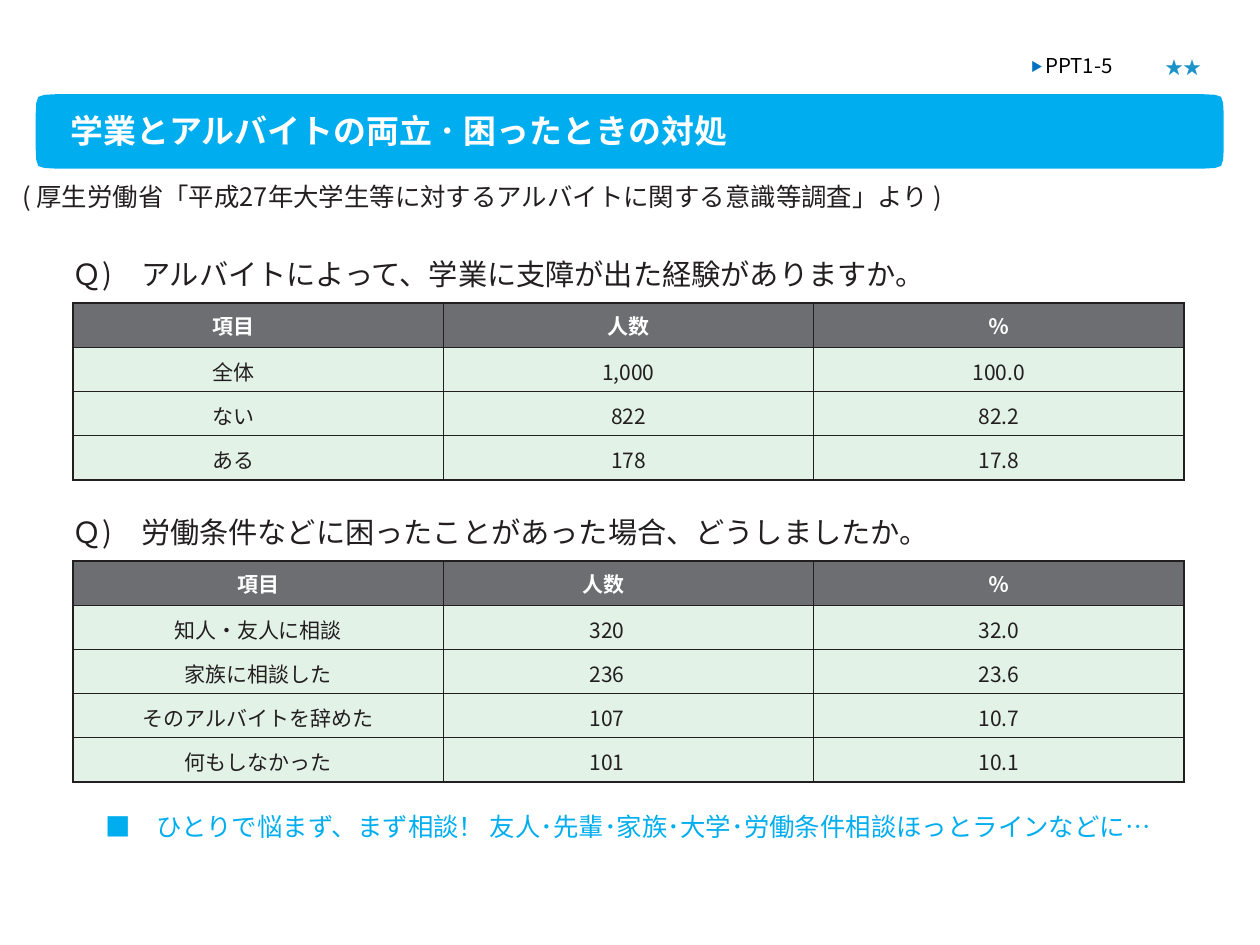
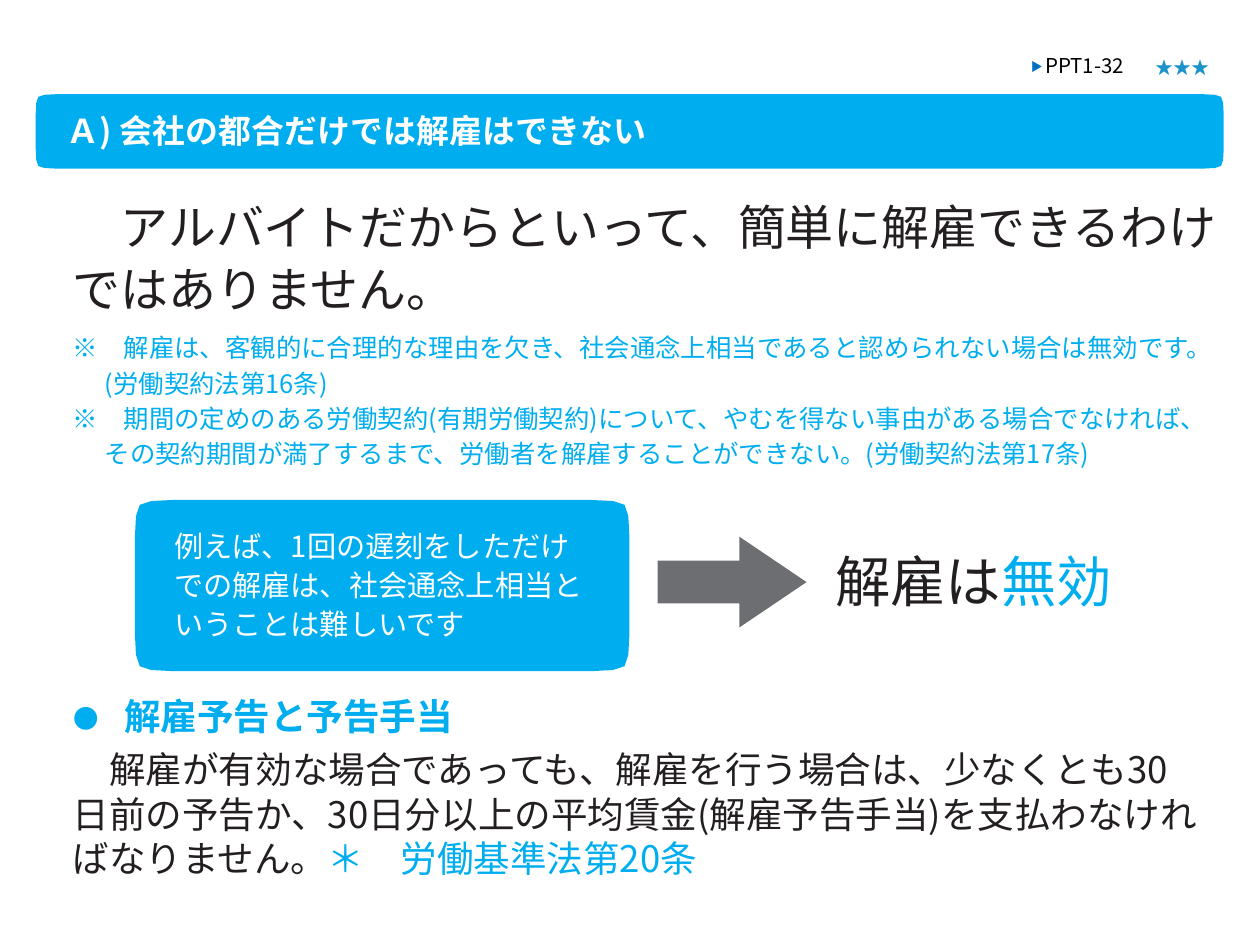
from lxml import etree
from pptx import Presentation, util as u
from pptx.dml.color import RGBColor
from pptx.enum import shapes, text
from pptx.oxml import ns

HUES = {"sky": "00AEEF", "ink": "231F20", "gray": "6D6E71", "mint": "E3F2E7",
        "white": "FFFFFF", "black": "000000", "mark": "0070C0", "star": "1B93C9"}
FONT = "Noto Sans CJK JP"
LEFT, MID, RIGHT = text.PP_ALIGN.LEFT, text.PP_ALIGN.CENTER, text.PP_ALIGN.RIGHT
CURVE = [(1, 0), (0.43, 0.03), (0.13, 0.13), (0.03, 0.43), (0, 1)]
TABLE_X, TABLE_W, ROW_H = 1.47, 22.4, 0.89


def tint(name):
    return RGBColor.from_string(HUES[name])


class Deck:
    """Holds the shared style and the current slide."""

    def __init__(self):
        self.file = Presentation()
        self.file.slide_width, self.file.slide_height = u.Cm(25.4), u.Cm(19.05)
        self.slide = None

    def page(self, layout, title, left, code, stars, star_x):
        self.slide = self.file.slides.add_slide(self.file.slide_layouts[layout])
        head = self.slide.shapes.title
        band = self.block(0.72, 1.9, 23.95, 1.5, 0.41)
        head.element.addprevious(band.element)
        self.fill(head, (left, 2.18, 22.5, 0.84),
                  [([(title, {"size": 18.8, "bold": True, "hue": "white"})], {})], 0.05)
        self.label((20.78, 1.04, 2.5, 0.53),
                   [([("▶ ", {"size": 11.7, "hue": "mark", "base": 9}),
                      (code, {"size": 11.7, "hue": "black"})], {})], 0.03)
        self.label((star_x, 1.14, 1.4, 0.5),
                   [([(stars, {"size": 10.3, "hue": "star"})], {})], 0)

    def paint(self, shape, hue):
        shape.shadow.inherit = False
        shape.fill.solid()
        shape.fill.fore_color.rgb = tint(hue)
        shape.line.fill.background()
        return shape

    def block(self, x, y, w, h, bend):
        top = [(bend * a, bend * b) for a, b in CURVE]
        left = top + [(a, h - b) for a, b in reversed(top)]
        right = [(w - a, b) for a, b in reversed(left)]
        dots = [(u.Cm(x + a), u.Cm(y + b)) for a, b in left + right]
        pen = self.slide.shapes.build_freeform(*dots[0])
        pen.add_line_segments(dots[1:], close=True)
        return self.paint(pen.convert_to_shape(), "sky")

    def arrow(self, x, y, w, h):
        kind = shapes.MSO_SHAPE.RIGHT_ARROW
        shape = self.slide.shapes.add_shape(kind, *map(u.Cm, (x, y, w, h)))
        shape.adjustments[0], shape.adjustments[1] = 0.47, 0.74
        self.paint(shape, "gray")

    def say(self, para, runs, form):
        form = {"alignment": LEFT, "line_spacing": 1.0, "space_before": u.Pt(0), **form}
        left, hang = form.pop("left", 0), form.pop("hang", 0)
        for key, value in form.items():
            setattr(para, key, value)
        props = para._p.get_or_add_pPr()
        props.set("marL", str(u.Cm(left)))
        props.set("indent", str(u.Cm(hang)))
        etree.SubElement(props, ns.qn("a:buNone"))
        for words, look in runs:
            run = para.add_run()
            run.text = words
            style = {"name": FONT, "size": u.Pt(look["size"]), "bold": look.get("bold", False)}
            for key, value in style.items():
                setattr(run.font, key, value)
            run.font.color.rgb = tint(look["hue"])
            mark = run._r.get_or_add_rPr()
            etree.SubElement(mark, ns.qn("a:ea")).set("typeface", FONT)
            if "base" in look:
                mark.set("baseline", str(look["base"] * 1000))

    def fill(self, shape, spot, paras, inset):
        for key, value in zip(("left", "top", "width", "height"), spot):
            setattr(shape, key, u.Cm(value))
        frame = shape.text_frame
        form = {"margin_left": 0, "margin_right": 0, "margin_bottom": 0,
                "margin_top": u.Cm(inset), "word_wrap": True,
                "auto_size": text.MSO_AUTO_SIZE.NONE,
                "vertical_anchor": text.MSO_ANCHOR.TOP}
        for key, value in form.items():
            setattr(frame, key, value)
        for at, (runs, look) in enumerate(paras):
            self.say(frame.add_paragraph() if at else frame.paragraphs[0], runs, look)

    def label(self, spot, paras, inset=0.05):
        box = self.slide.shapes.add_textbox(*map(u.Cm, spot))
        self.fill(box, spot, paras, inset)

    def line(self, words, spot, size, hue):
        self.label(spot, [([(words, {"size": size, "hue": hue})], {})])

    def edge(self, cell, wide):
        props = cell._tc.get_or_add_tcPr()
        for at, (side, bold) in enumerate(wide.items()):
            rule = etree.Element(ns.qn("a:" + side), w=str(u.Pt(1.5 if bold else 0.5)))
            paint = etree.SubElement(rule, ns.qn("a:solidFill"))
            etree.SubElement(paint, ns.qn("a:srgbClr"), val=HUES["ink"])
            props.insert(at, rule)

    def table(self, top, rows, shift):
        high, wide = len(rows), len(rows[0])
        spot = (TABLE_X, top, TABLE_W, ROW_H * high)
        grid = self.slide.shapes.add_table(high, wide, *map(u.Cm, spot)).table
        for col in grid.columns:
            col.width = u.Cm(TABLE_W / wide)
        for r, row in enumerate(rows):
            grid.rows[r].height = u.Cm(ROW_H)
            for c, words in enumerate(row):
                cell = grid.cell(r, c)
                form = {"margin_left": 0, "margin_bottom": 0,
                        "margin_top": u.Cm(0.18 if r else 0.15),
                        "margin_right": u.Cm(3.81 if c == shift else 0)}
                for key, value in form.items():
                    setattr(cell, key, value)
                cell.fill.solid()
                cell.fill.fore_color.rgb = tint("mint" if r else "gray")
                look = {"size": 12, "bold": r == 0, "hue": "ink" if r else "white"}
                self.say(cell.text_frame.paragraphs[0], [(words, look)],
                         {"alignment": RIGHT if c == shift else MID})
                self.edge(cell, {"lnL": c == 0, "lnR": c == wide - 1,
                                 "lnT": r == 0, "lnB": r == high - 1})


def survey(deck):
    deck.page(5, "学業とアルバイトの両立 ･ 困ったときの対処", 1.42, "PPT1-5", "★★", 23.5)
    deck.line("( 厚生労働省「平成27年大学生等に対するアルバイトに関する意識等調査」より )",
              (0.45, 3.61, 23.44, 0.8), 14.5, "ink")
    head = ("項目", "人数", "％")
    asks = [
        (5.11, "Ｑ)　アルバイトによって、学業に支障が出た経験がありますか。", 0,
         [("全体", "1,000", "100.0"), ("ない", "822", "82.2"), ("ある", "178", "17.8")]),
        (10.31, "Ｑ)　労働条件などに困ったことがあった場合、どうしましたか。", 1,
         [("知人・友人に相談", "320", "32.0"), ("家族に相談した", "236", "23.6"),
          ("そのアルバイトを辞めた", "107", "10.7"), ("何もしなかった", "101", "10.1")]),
    ]
    for top, ask, shift, rows in asks:
        deck.line(ask, (1.47, top, 20.75, 0.76), 16.7, "ink")
        deck.table(top + 1, [head] + rows, shift)
    deck.line("■　ひとりで悩まず、まず相談！ 友人･先輩･家族･大学･労働条件相談ほっとラインなどに…",
              (2.13, 16.31, 21.77, 0.66), 14.5, "sky")


def firing(deck):
    deck.page(1, "Ａ) 会社の都合だけでは解雇はできない", 1.35, "PPT1-32", "★★★", 23.29)
    note = {"size": 14.5, "hue": "sky"}
    hang = {"left": 0.79, "hang": -0.64, "line_spacing": 1.16}
    deck.fill(deck.slide.placeholders[1], (1.32, 3.86, 23.34, 5.54), [
        ([("　アルバイトだからといって、簡単に解雇できるわけではありません。",
           {"size": 27.4, "hue": "ink"})], {"left": 0.15, "line_spacing": 1.07}),
        ([("※　解雇は、客観的に合理的な理由を欠き、社会通念上相当であると認められない場合は無効です。"
           "(労働契約法第16条)", note)], {**hang, "space_before": u.Pt(6)}),
        ([("※　期間の定めのある労働契約(有期労働契約)について、やむを得ない事由がある場合でなければ、"
           "その契約期間が満了するまで、労働者を解雇することができない。(労働契約法第17条)", note)], hang),
    ], 0.05)
    deck.block(2.72, 10.08, 9.97, 3.45, 0.76)
    deck.label((3.51, 10.54, 8.36, 2.31), [
        ([("例えば、1回の遅刻をしただけでの解雇は、社会通念上相当ということは難しいです",
           {"size": 16.7, "hue": "white"})], {"line_spacing": 1.11})], 0.03)
    deck.arrow(13.26, 10.82, 3, 1.83)
    deck.label((16.84, 11, 7.16, 1.4), [
        ([("解雇は", {"size": 31.6, "hue": "ink"}),
          ("無効", {"size": 31.6, "hue": "sky"})], {})], 0.03)
    deck.label((1.44, 13.67, 22.78, 3.84), [
        ([("●　", {"size": 25, "bold": True, "hue": "sky", "base": 6}),
          ("解雇予告と予告手当", {"size": 20.9, "bold": True, "hue": "sky"})], {"left": 0.04}),
        ([("　解雇が有効な場合であっても、解雇を行う場合は、少なくとも30日前の予告か、"
           "30日分以上の平均賃金(解雇予告手当)を支払わなければなりません。",
           {"size": 20.9, "hue": "ink"}),
          ("＊　労働基準法第20条", {"size": 20.9, "hue": "sky"})],
         {"left": 0.03, "line_spacing": 1.01, "space_before": u.Pt(4.2)}),
    ], 0.18)


def main():
    deck = Deck()
    survey(deck)
    firing(deck)
    deck.file.save("out.pptx")


if __name__ == "__main__":
    main()
